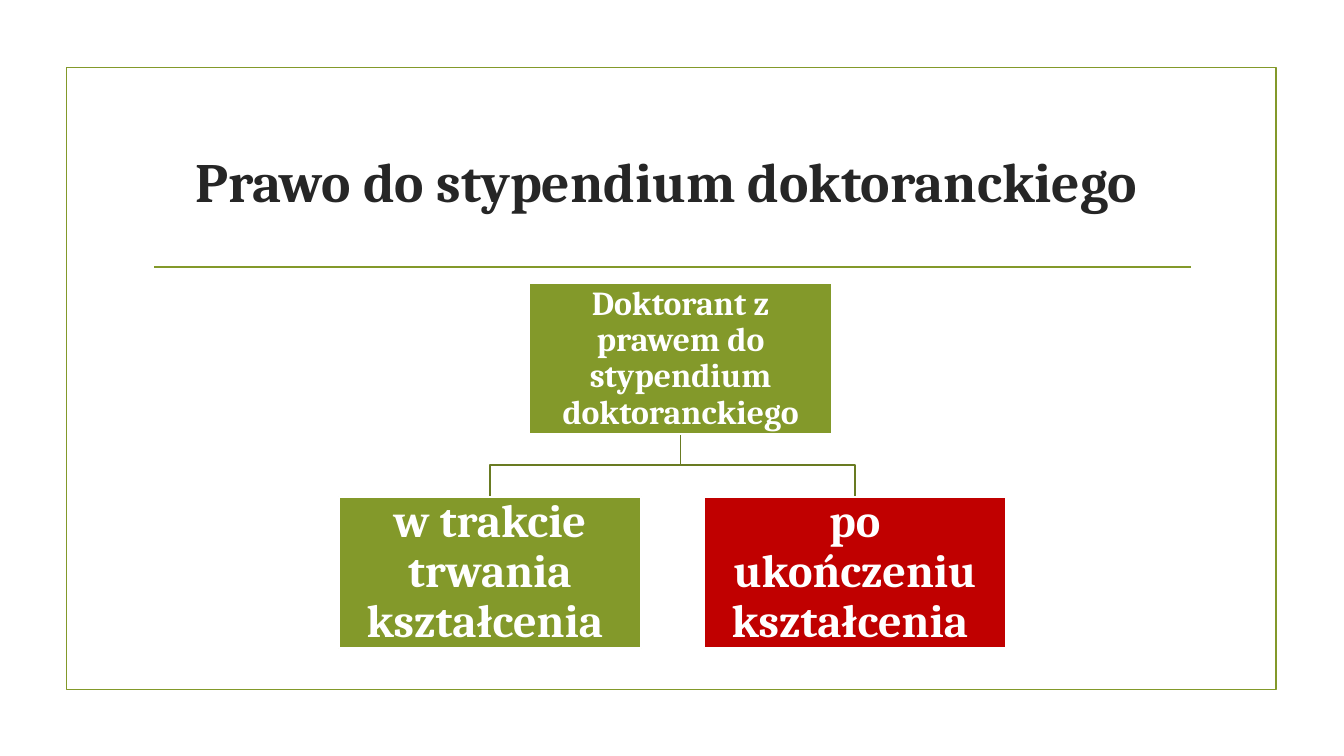
from lxml import etree
from pptx import Presentation
from pptx.dml.color import RGBColor
from pptx.enum.shapes import MSO_CONNECTOR, MSO_SHAPE
from pptx.enum.text import MSO_ANCHOR, PP_ALIGN
from pptx.oxml.ns import qn
from pptx.util import Inches, Pt

RECTANGLE = MSO_SHAPE.RECTANGLE
STRAIGHT = MSO_CONNECTOR.STRAIGHT
MIDDLE = MSO_ANCHOR.MIDDLE
CENTER = PP_ALIGN.CENTER

GREEN, DARK_GREEN, RED = "83992A", "697B22", "C00000"
WHITE, DARK_GRAY = "FFFFFF", "262626"
BOX_WIDTH, BOX_HEIGHT = 3, 1.5


def color(hex_string):
    return RGBColor.from_string(hex_string)


def write_text(shape, text, size, text_color, inset):
    frame = shape.text_frame
    frame.word_wrap = True
    frame.vertical_anchor = MIDDLE
    frame.margin_left = frame.margin_right = Inches(inset)
    frame.margin_top = frame.margin_bottom = Inches(0.02)
    frame.text = text
    para = frame.paragraphs[0]
    para.alignment = CENTER
    font = para.runs[0].font
    font.name, font.size, font.bold = "Cambria", Pt(size), True
    font.color.rgb = color(text_color)
    return para


deck = Presentation()
deck.slide_width, deck.slide_height = Inches(13.33), Inches(7.5)
page = deck.slides.add_slide(deck.slide_layouts[6])
page.background.fill.solid()
page.background.fill.fore_color.rgb = color(WHITE)
shapes = page.shapes

# Frame around the page
border = shapes.add_shape(RECTANGLE, Inches(0.66), Inches(0.67), Inches(12), Inches(6.17))
border.shadow.inherit = False
border.fill.background()
border.line.color.rgb = color(GREEN)
border.line.width = Pt(1.25)

# Title and the rule below it
rule = shapes.add_connector(STRAIGHT, Inches(1.53), Inches(2.65), Inches(11.81), Inches(2.65))
rule.line.color.rgb = color(GREEN)
rule.line.width = Pt(1.25)
etree.SubElement(rule._element.spPr, qn("a:effectLst"))

title = shapes.add_textbox(Inches(1.42), Inches(1.07), Inches(10.5), Inches(1.43))
write_text(title, "Prawo do stypendium doktoranckiego ", 39.6, DARK_GRAY, 0.1)

# Organisation chart: left, top, fill, text size, text
parent = (5.25, 2.81, GREEN, 24, "Doktorant z prawem do stypendium doktoranckiego")
children = [
    (3.36, 4.93, GREEN, 33, "w trakcie trwania kształcenia "),
    (6.98, 4.93, RED, 33, "po ukończeniu kształcenia "),
]

# Elbow lines from the parent to each child
start_x = parent[0] + BOX_WIDTH / 2
start_y = parent[1] + BOX_HEIGHT
for left, top, *_ in children:
    end_x = left + BOX_WIDTH / 2
    bend_y = start_y + 0.3
    builder = shapes.build_freeform(Inches(start_x), Inches(start_y))
    corners = [(start_x, bend_y), (end_x, bend_y), (end_x, top)]
    builder.add_line_segments([(Inches(x), Inches(y)) for x, y in corners], close=False)
    elbow = builder.convert_to_shape()
    elbow.shadow.inherit = False
    elbow.fill.background()
    elbow.line.color.rgb = color(DARK_GREEN)
    elbow.line.width = Pt(1.25)

# Boxes
for left, top, fill, size, text in [parent, *children]:
    box = shapes.add_shape(RECTANGLE, Inches(left), Inches(top), Inches(BOX_WIDTH), Inches(BOX_HEIGHT))
    box.shadow.inherit = False
    box.fill.solid()
    box.fill.fore_color.rgb = color(fill)
    box.line.color.rgb = color(WHITE)
    box.line.width = Pt(1.25)
    para = write_text(box, text, size, WHITE, 0.02)
    para.line_spacing = 0.9

deck.save("out.pptx")
